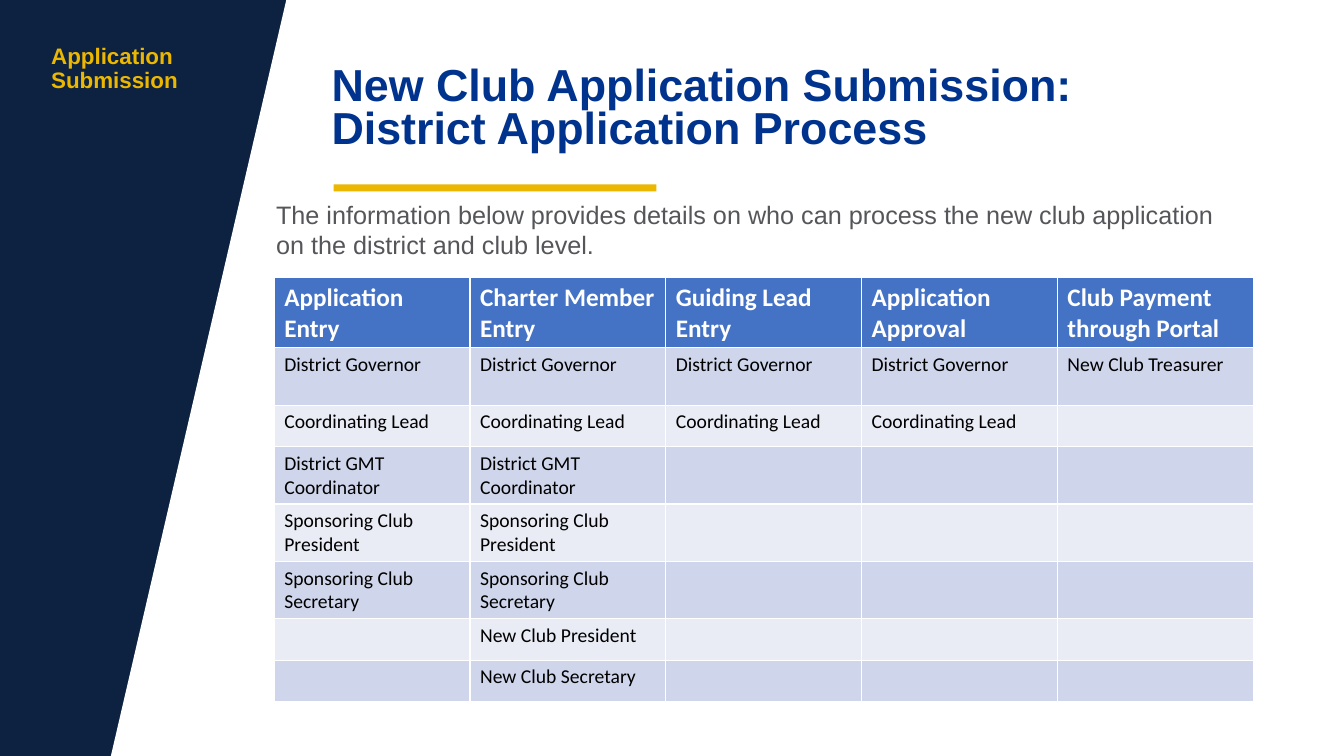
from pptx import Presentation
from pptx.dml.color import RGBColor
from pptx.enum.shapes import MSO_SHAPE
from pptx.util import Inches, Pt

NAVY, GOLD, BLUE, GREY, WHITE = "0D2240", "EBB700", "00338D", "55565A", "FFFFFF"
HEAD, BANDS = "4472C4", ("CFD5EA", "E9EBF5")

HEADS = ["Application Entry", "Charter Member Entry", "Guiding Lead Entry",
         "Application Approval", "Club Payment through Portal"]
ROLES = [
    ["District Governor"] * 4 + ["New Club Treasurer"],
    ["Coordinating Lead"] * 4,
    ["District GMT Coordinator"] * 2,
    ["Sponsoring Club President"] * 2,
    ["Sponsoring Club Secretary"] * 2,
    ["", "New Club President"],
    ["", "New Club Secretary"],
]
HEIGHTS = [0.69, 0.57, 0.41, 0.57, 0.57, 0.57, 0.41, 0.41]


def paint(item, color):
    item.fill.solid()
    item.fill.fore_color.rgb = RGBColor.from_string(color)


def finish(shape, color):
    paint(shape, color)
    shape.line.fill.background()
    shape.shadow.inherit = False


def style(par, color, **fonts):
    """Set the font of every run in the paragraph."""
    for run in par.runs:
        run.font.color.rgb = RGBColor.from_string(color)
        for key, value in fonts.items():
            setattr(run.font, key, value)


def add_rect(slide, box, color):
    shape = slide.shapes.add_shape(MSO_SHAPE.RECTANGLE, *map(Inches, box))
    finish(shape, color)


def add_panel(slide, points, color):
    start, *rest = [(Inches(x), Inches(y)) for x, y in points]
    draft = slide.shapes.build_freeform(*start)
    draft.add_line_segments(rest)
    finish(draft.convert_to_shape(), color)


def add_text(slide, box, text, color, size, bold=False, **layout):
    frame = slide.shapes.add_textbox(*map(Inches, box)).text_frame
    frame.word_wrap = True
    par = frame.paragraphs[0]
    par.text = text
    for key, value in layout.items():
        setattr(par, key, value)
    style(par, color, name="Arial", size=Pt(size), bold=bold)


def add_grid(slide, box):
    rows = [HEADS] + ROLES
    table = slide.shapes.add_table(len(rows), len(HEADS), *map(Inches, box)).table
    for row, height in zip(table.rows, HEIGHTS):
        row.height = Inches(height)
    for i, texts in enumerate(rows):
        top = i == 0
        for j in range(len(HEADS)):
            cell = table.cell(i, j)
            paint(cell, HEAD if top else BANDS[(i - 1) % 2])
            par = cell.text_frame.paragraphs[0]
            par.font.size = Pt(14)
            if j < len(texts) and texts[j]:
                par.text = texts[j]
                style(par, WHITE if top else "000000", name="Calibri",
                      size=Pt(18 if top else 14), bold=top)


def main():
    deck = Presentation()
    deck.slide_width, deck.slide_height = Inches(13.33), Inches(7.5)
    slide = deck.slides.add_slide(deck.slide_layouts[6])

    add_rect(slide, (0, 0, 13.33, 7.5), NAVY)
    add_panel(slide, [(2.84, 0), (13.33, 0), (13.33, 7.5), (1.1, 7.5)], WHITE)
    add_text(slide, (0.41, 0.4, 1.9, 1.06), "Application Submission",
             GOLD, 16, bold=True, line_spacing=0.9)
    add_text(slide, (2.64, 1.93, 9.71, 0.85),
             "The information below provides details on who can process "
             "the new club application on the district and club level.",
             GREY, 18, space_before=Pt(3.6))
    add_rect(slide, (3.31, 1.83, 3.2, 0.07), GOLD)
    add_text(slide, (3.19, 0.62, 9.16, 1.05),
             "New Club Application Submission:\vDistrict Application Process",
             BLUE, 32, bold=True, line_spacing=0.8)
    add_grid(slide, (2.72, 2.75, 9.71, 4.2))
    deck.save("out.pptx")


if __name__ == "__main__":
    main()
